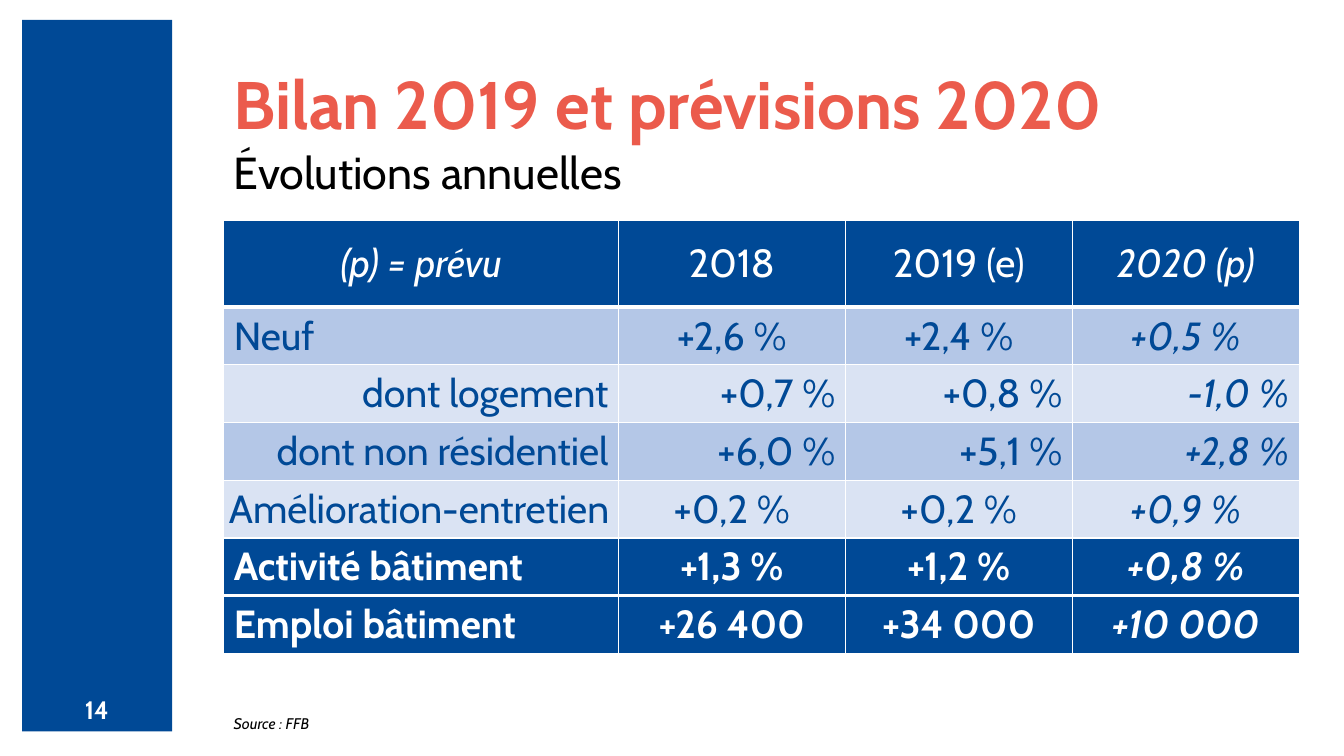
from lxml import etree
from pptx import Presentation
from pptx.dml.color import RGBColor
from pptx.enum.shapes import MSO_SHAPE
from pptx.enum.text import MSO_ANCHOR, MSO_AUTO_SIZE, PP_ALIGN as Align
from pptx.oxml.ns import qn
from pptx.util import Cm, Pt

FONT = "Cabin"
BLUE = RGBColor(0x00, 0x49, 0x96)
CORAL = RGBColor(0xEB, 0x5B, 0x4C)
MID_BLUE = RGBColor(0xB4, 0xC7, 0xE7)
PALE_BLUE = RGBColor(0xDA, 0xE3, 0xF3)
WHITE = RGBColor(0xFF, 0xFF, 0xFF)
BLACK = RGBColor(0x00, 0x00, 0x00)

LEFT = 5.64
COLUMN_WIDTHS = (9.94, 5.72, 5.72, 5.72)
HEADER_HEIGHT = 2.18
ROW_HEIGHT = 1.45

HEADER = ("(p) = prévu", "2018", "2019 (e)", "2020 (p)")
# Values, fill, text colour, bold, label alignment, value alignment
ROWS = (
    (HEADER, BLUE, WHITE, False, Align.CENTER, Align.CENTER),
    (("Neuf", "+2,6 %", "+2,4 %", "+0,5 %"),
     MID_BLUE, BLUE, False, Align.LEFT, Align.CENTER),
    (("dont logement", "+0,7 %", "+0,8 %", "-1,0 %"),
     PALE_BLUE, BLUE, False, Align.RIGHT, Align.RIGHT),
    (("dont non résidentiel", "+6,0 %", "+5,1 %", "+2,8 %"),
     MID_BLUE, BLUE, False, Align.RIGHT, Align.RIGHT),
    (("Amélioration-entretien", "+0,2 %", "+0,2 %", "+0,9 %"),
     PALE_BLUE, BLUE, False, Align.LEFT, Align.CENTER),
    (("Activité bâtiment", "+1,3 %", "+1,2 %", "+0,8 %"),
     BLUE, WHITE, True, Align.LEFT, Align.CENTER),
    (("Emploi bâtiment", "+26 400", "+34 000", "+10 000"),
     BLUE, WHITE, True, Align.LEFT, Align.CENTER),
)
# Widths of the horizontal rules, above and below each row
RULES = ((1, 3), (1, 1), (1, 1), (1, 1), (1, 2.25), (2.25, 2.25), (2.25, 1))


def write(text_frame, text, size, color, bold=False, italic=False, align=Align.LEFT):
    text_frame.text = text
    paragraph = text_frame.paragraphs[0]
    paragraph.alignment = align
    font = paragraph.runs[0].font
    font.name, font.size = FONT, Pt(size)
    font.bold, font.italic = bold, italic
    font.color.rgb = color


def place_text(shape, left, top, width, height, text, size, color, **style):
    shape.left, shape.top = Cm(left), Cm(top)
    shape.width, shape.height = Cm(width), Cm(height)
    text_frame = shape.text_frame
    write(text_frame, text, size, color, **style)
    text_frame.word_wrap = True
    text_frame.auto_size = MSO_AUTO_SIZE.NONE
    text_frame.vertical_anchor = MSO_ANCHOR.MIDDLE
    text_frame.paragraphs[0].line_spacing = 0.9
    text_frame.paragraphs[0].space_before = Pt(0)


def add_text(slide, *args, **style):
    box = slide.shapes.add_textbox(0, 0, 0, 0)
    place_text(box, *args, **style)


def add_side_band(slide):
    band = slide.shapes.add_shape(
        MSO_SHAPE.RECTANGLE, Cm(0.56), Cm(0.5), Cm(3.78), Cm(17.93))
    band.shadow.inherit = False
    band.fill.solid()
    band.fill.fore_color.rgb = BLUE
    band.line.fill.background()


def set_borders(cell, above, below):
    """Draw white cell borders; call before the cell is filled."""
    properties = cell._tc.get_or_add_tcPr()
    for side, width in (("lnL", 1), ("lnR", 1), ("lnT", above), ("lnB", below)):
        line = etree.SubElement(properties, qn(f"a:{side}"), w=str(Pt(width)))
        fill = etree.SubElement(line, qn("a:solidFill"))
        etree.SubElement(fill, qn("a:srgbClr"), val=str(WHITE))


def add_forecast_table(slide):
    height = HEADER_HEIGHT + ROW_HEIGHT * (len(ROWS) - 1)
    table = slide.shapes.add_table(
        len(ROWS), len(COLUMN_WIDTHS), Cm(LEFT), Cm(5.56),
        Cm(sum(COLUMN_WIDTHS)), Cm(height)).table
    table.horz_banding = False
    for column, width in zip(table.columns, COLUMN_WIDTHS):
        column.width = Cm(width)
    for i, (values, fill, color, bold, label_align, value_align) in enumerate(ROWS):
        table.rows[i].height = Cm(ROW_HEIGHT if i else HEADER_HEIGHT)
        for j, value in enumerate(values):
            cell = table.cell(i, j)
            set_borders(cell, *RULES[i])
            cell.fill.solid()
            cell.fill.fore_color.rgb = fill
            cell.vertical_anchor = MSO_ANCHOR.MIDDLE
            italic = j == 3 or value == HEADER[0]
            write(cell.text_frame, value, 28, color, bold, italic,
                  value_align if j else label_align)
            if value == "Amélioration-entretien":
                cell.margin_left = cell.margin_right = Cm(0.13)


def main():
    presentation = Presentation()
    presentation.slide_width, presentation.slide_height = Cm(33.87), Cm(19.05)
    slide = presentation.slides.add_slide(presentation.slide_layouts[0])
    title, subtitle = slide.placeholders

    add_side_band(slide)
    add_text(slide, 1.73, 17.42, 1.42, 1.02, "14", 18, WHITE,
             bold=True, align=Align.CENTER)
    place_text(title, LEFT, 1.65, 27.08, 2.11,
               "Bilan 2019 et prévisions 2020", 48, CORAL, bold=True)
    place_text(subtitle, LEFT, 3.78, 27.08, 1.27, "Évolutions annuelles", 32, BLACK)
    add_forecast_table(slide)
    add_text(slide, LEFT, 17.96, 9.88, 0.61, "Source : FFB", 11, BLACK, italic=True)
    presentation.save("out.pptx")


if __name__ == "__main__":
    main()
